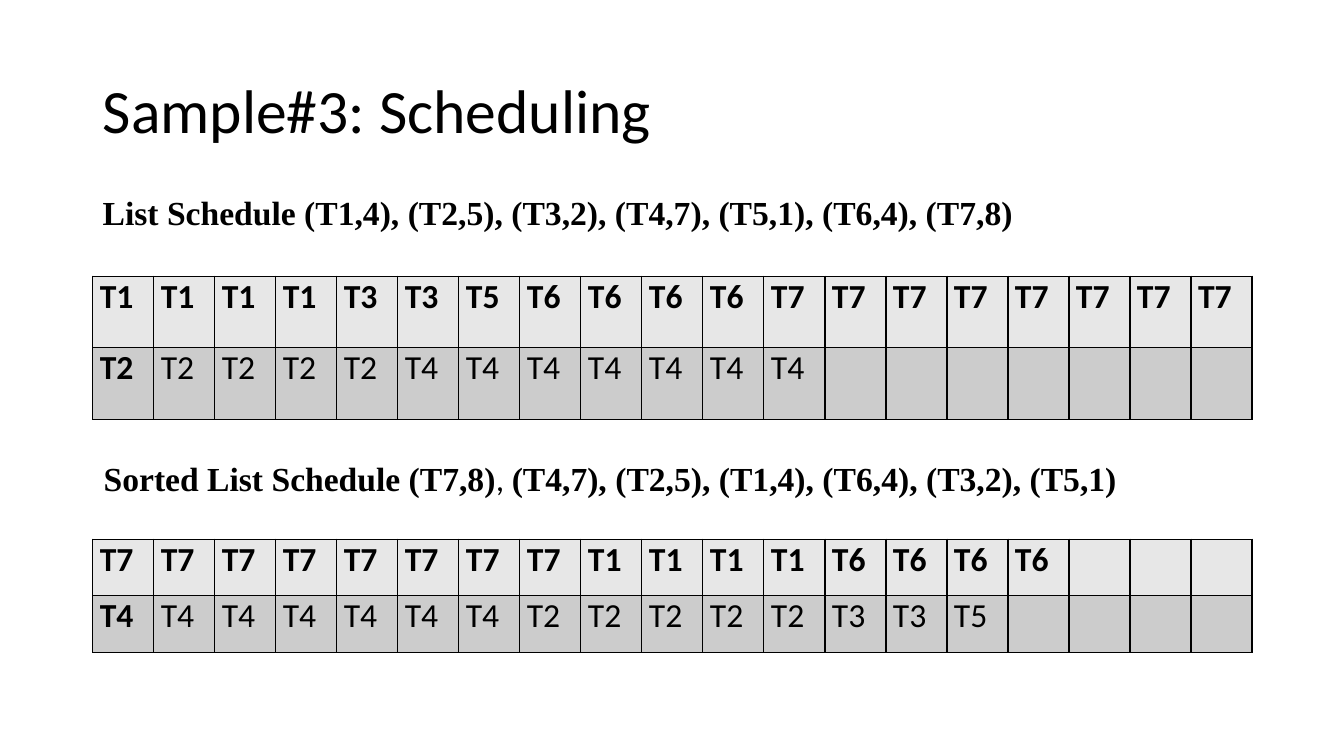
from lxml.etree import SubElement
from pptx import Presentation
from pptx.dml.color import RGBColor
from pptx.enum.text import MSO_ANCHOR, MSO_AUTO_SIZE
from pptx.oxml.ns import qn
from pptx.util import Inches, Pt

COLORS = {"text": "000000", "border": "000000", "first": "E7E7E7", "second": "CCCCCC"}
LEFT, WIDTH = 0.92, 11.5
SLOTS = 19
HEADING, BODY = "Times New Roman", "Calibri"


def set_font(paragraph, name, size, bold=False):
    font = paragraph.font
    font.name, font.size, font.bold = name, Pt(size), bold
    font.color.rgb = RGBColor.from_string(COLORS["text"])


def add_borders(cell):
    """Draw the four cell edges; they must come before the fill in the XML."""
    properties = cell._tc.get_or_add_tcPr()
    for edge in ("lnL", "lnR", "lnT", "lnB"):
        line = SubElement(properties, qn(f"a:{edge}"), w=str(Pt(1)))
        fill = SubElement(line, qn("a:solidFill"))
        SubElement(fill, qn("a:srgbClr"), val=COLORS["border"])


prs = Presentation()
prs.slide_width, prs.slide_height = Inches(13.33), Inches(7.5)
slide = prs.slides.add_slide(prs.slide_layouts[5])

title = slide.shapes.title
title.left, title.top = Inches(LEFT), Inches(0.4)
title.width, title.height = Inches(WIDTH), Inches(1.45)
title.text_frame.text = "Sample#3: Scheduling"
title.text_frame.vertical_anchor = MSO_ANCHOR.MIDDLE
heading = title.text_frame.paragraphs[0]
heading.alignment = 1
heading.line_spacing = 0.9
set_font(heading, BODY, 44)

# Each caption is a list of bold parts, joined by a plain comma.
# Each processor runs its tasks in turn, given as (task, time slots).
schedules = [
    {
        "caption": ["List Schedule (T1,4), (T2,5), (T3,2), (T4,7), (T5,1), (T6,4), (T7,8)"],
        "caption_at": (0.92, 1.85),
        "top": 2.74,
        "row_height": 0.71,
        "processors": [
            [("T1", 4), ("T3", 2), ("T5", 1), ("T6", 4), ("T7", 8)],
            [("T2", 5), ("T4", 7)],
        ],
    },
    {
        "caption": ["Sorted List Schedule (T7,8)",
                    "(T4,7), (T2,5), (T1,4), (T6,4), (T3,2), (T5,1)"],
        "caption_at": (0.93, 4.49),
        "top": 5.35,
        "row_height": 0.56,
        "processors": [
            [("T7", 8), ("T1", 4), ("T6", 4)],
            [("T4", 7), ("T2", 5), ("T3", 2), ("T5", 1)],
        ],
    },
]

for schedule in schedules:
    left, top = schedule["caption_at"]
    caption = slide.shapes.add_textbox(Inches(left), Inches(top), Inches(10.41), Inches(0.5))
    caption.text_frame.word_wrap = True
    caption.text_frame.auto_size = MSO_AUTO_SIZE.SHAPE_TO_FIT_TEXT
    sentence = caption.text_frame.paragraphs[0]
    set_font(sentence, HEADING, 24, bold=True)
    for index, part in enumerate(schedule["caption"]):
        if index:
            comma = sentence.add_run()
            comma.text = ", "
            comma.font.name, comma.font.bold = BODY, False
        sentence.add_run().text = part

    processors = schedule["processors"]
    timeline = slide.shapes.add_table(
        len(processors), SLOTS, Inches(LEFT), Inches(schedule["top"]),
        Inches(WIDTH), Inches(schedule["row_height"] * len(processors))).table
    timeline.first_row = timeline.horz_banding = False
    for column in timeline.columns:
        column.width = Inches(WIDTH / SLOTS)

    for row, (tasks, shade) in enumerate(zip(processors, ("first", "second"))):
        timeline.rows[row].height = Inches(schedule["row_height"])
        busy = [task for task, length in tasks for _ in range(length)]
        for slot in range(SLOTS):
            cell = timeline.cell(row, slot)
            cell.margin_left = cell.margin_right = Inches(0.07)
            cell.margin_top = cell.margin_bottom = 0
            add_borders(cell)
            cell.fill.solid()
            cell.fill.fore_color.rgb = RGBColor.from_string(COLORS[shade])
            cell.text = busy[slot] if slot < len(busy) else ""
            label = cell.text_frame.paragraphs[0]
            label.space_before = Pt(4)
            set_font(label, BODY, 24, bold=row == 0 or slot == 0)

prs.save("out.pptx")
